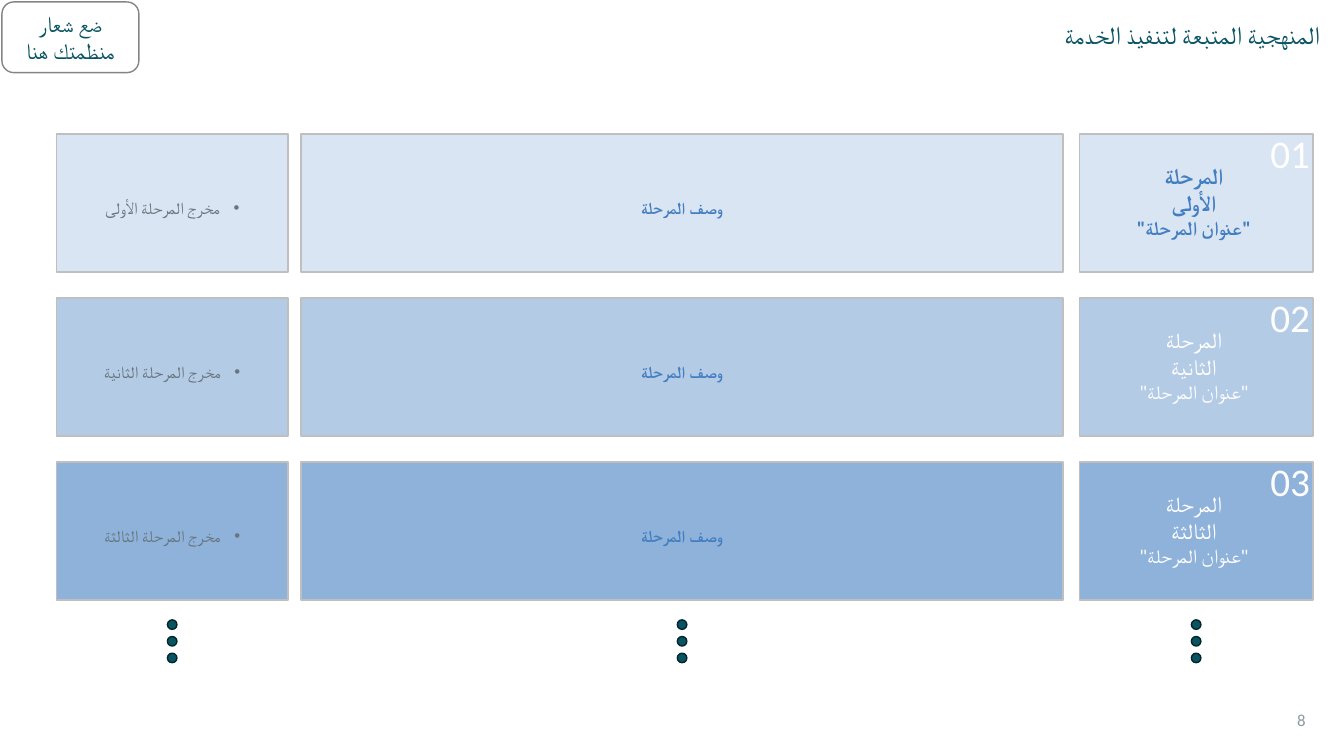
from dataclasses import dataclass

from lxml.etree import SubElement
from pptx import Presentation
from pptx.dml.color import RGBColor
from pptx.enum.shapes import MSO_SHAPE
from pptx.enum.text import MSO_ANCHOR, PP_ALIGN
from pptx.oxml.ns import qn
from pptx.util import Cm, Pt


@dataclass(frozen=True)
class Theme:
    font: str = "Calibri"
    teal: str = "095463"
    dark_teal: str = "04252B"
    blue: str = "437EC1"
    grey: str = "68767E"
    page_grey: str = "8C999F"
    logo_line: str = "858585"
    card_line: str = "BFBFBF"
    white: str = "FFFFFF"
    stage_fills: tuple = ("D9E5F3", "B4CBE6", "8EB2DA")
    number_size: int = 28
    title_size: int = 18
    stage_size: int = 16
    subtitle_size: int = 14
    body_size: int = 12


theme = Theme()
prs = Presentation()
prs.slide_width, prs.slide_height = Cm(33.87), Cm(19.05)
slide = prs.slides.add_slide(prs.slide_layouts[6])


def draw(kind, left, top, width, height, fill, line):
    shape = slide.shapes.add_shape(kind, Cm(left), Cm(top), Cm(width), Cm(height))
    shape.shadow.inherit = False
    shape.fill.solid()
    shape.fill.fore_color.rgb = RGBColor.from_string(fill)
    shape.line.color.rgb = RGBColor.from_string(line)
    shape.line.width = Pt(1)
    return shape


def write(text, *, size, color, at=None, shape=None, bold=False, align=PP_ALIGN.CENTER,
          anchor=MSO_ANCHOR.TOP, rtl=False, spacing=None, gap=0, bullet=False):
    """Write one paragraph into a given shape, or into a new text box placed at `at`."""
    target = shape or slide.shapes.add_textbox(*(Cm(length) for length in at))
    frame = target.text_frame
    frame.word_wrap = True
    frame.vertical_anchor = anchor
    paragraph = frame.paragraphs[0]
    paragraph.alignment = align
    paragraph.space_before = paragraph.space_after = Pt(gap)
    if spacing:
        paragraph.line_spacing = spacing
    properties = paragraph._p.get_or_add_pPr()
    if rtl:
        properties.set("rtl", "1")
    if bullet:
        properties.set("marL", str(Cm(0.48)))
        properties.set("indent", str(-Cm(0.48)))
        SubElement(properties, qn("a:buFont")).set("typeface", "Arial")
        SubElement(properties, qn("a:buChar")).set("char", "•")
    run = paragraph.add_run()
    run.text = text
    run.font.size = Pt(size)
    run.font.bold = bold
    run.font.color.rgb = RGBColor.from_string(color)
    run.font.name = theme.font
    # Arabic letters take the complex-script font
    SubElement(run._r.get_or_add_rPr(), qn("a:cs")).set("typeface", theme.font)


# Logo placeholder, title and page number
logo = draw(MSO_SHAPE.ROUNDED_RECTANGLE, 0.05, 0.05, 3.45, 1.78, theme.white, theme.logo_line)
write("ضع شعار منظمتك هنا", shape=logo, size=theme.stage_size, color=theme.teal,
      anchor=MSO_ANCHOR.MIDDLE)
write("المنهجية المتبعة لتنفيذ الخدمة", at=(20.62, 0.36, 12.9, 1.02),
      size=theme.title_size, color=theme.teal, align=PP_ALIGN.RIGHT, rtl=True)
write("8", at=(32.44, 17.75, 1.12, 1.02), size=theme.body_size, color=theme.page_grey,
      align=PP_ALIGN.LEFT, rtl=True)

# Columns as (left, width), rows by a fixed pitch
description_column = (7.59, 19.2)
output_column = (1.42, 5.84)
stage_column = (27.2, 5.89)
first_top, row_pitch, row_height = 3.38, 4.13, 3.48

# Stages: label, output, text colour, bold
stages = [
    ("المرحلة الأولى", "مخرج المرحلة الأولى", theme.blue, True),
    ("المرحلة الثانية", "مخرج المرحلة الثانية", theme.white, False),
    ("المرحلة الثالثة", "مخرج المرحلة الثالثة", theme.white, False),
]
for row, (label, output, color, bold) in enumerate(stages):
    top = first_top + row * row_pitch
    description_card, output_card, stage_card = [
        draw(MSO_SHAPE.RECTANGLE, left, top, width, row_height,
             theme.stage_fills[row], theme.card_line)
        for left, width in (description_column, output_column, stage_column)
    ]
    write("وصف المرحلة", shape=description_card, size=theme.body_size, color=theme.blue,
          bold=True, anchor=MSO_ANCHOR.MIDDLE, rtl=True, spacing=1.5)
    write(output, shape=output_card, size=theme.body_size, color=theme.grey,
          anchor=MSO_ANCHOR.MIDDLE, rtl=True, spacing=1.5, bullet=True)
    write(label, at=(28.5, top + 0.59, 3.18, 0.94), size=theme.stage_size,
          color=color, bold=bold, gap=3)
    write('"عنوان المرحلة"', at=(27.13, top + 1.93, 5.92, 0.86), size=theme.subtitle_size,
          color=color, bold=bold, gap=3)
    write(f"{row + 1:02}", at=(31.5, top - 0.25, 2.03, 1.45), size=theme.number_size,
          color=theme.white, anchor=MSO_ANCHOR.MIDDLE)

# Continuation dots centred under each column
dot_size, dots_top, dot_pitch = 0.24, 15.62, 0.42
for left, width in (stage_column, description_column, output_column):
    for dot in range(3):
        draw(MSO_SHAPE.OVAL, left + (width - dot_size) / 2, dots_top + dot * dot_pitch,
             dot_size, dot_size, theme.teal, theme.dark_teal)

prs.save("out.pptx")
